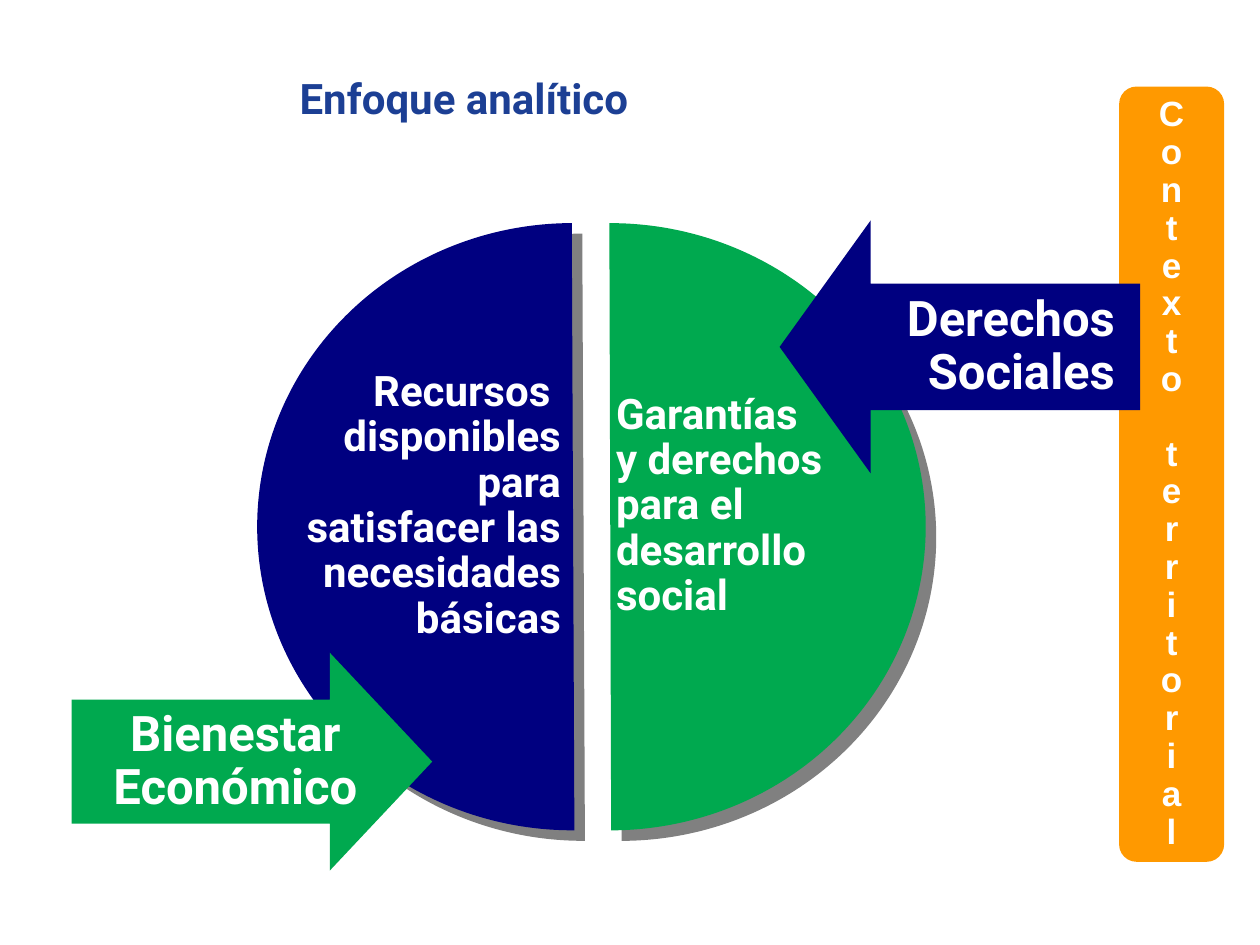
"""Build the slide on the analytic approach: two half discs, two arrows and a bar."""
from dataclasses import dataclass

from lxml.etree import SubElement
from pptx import Presentation
from pptx.dml.color import RGBColor
from pptx.enum.shapes import MSO_SHAPE
from pptx.enum.text import MSO_ANCHOR, MSO_AUTO_SIZE, PP_ALIGN
from pptx.oxml.ns import qn
from pptx.util import Pt

NAVY = RGBColor(0x00, 0x00, 0x80)
GREEN = RGBColor(0x00, 0xA9, 0x4F)
AMBER = RGBColor(0xFF, 0x99, 0x00)
BLUE = RGBColor(0x1C, 0x3F, 0x94)
WHITE = RGBColor(0xFF, 0xFF, 0xFF)
GRAY = RGBColor(0x80, 0x80, 0x80)


@dataclass
class Box:
    """A frame in points."""
    left: float
    top: float
    width: float
    height: float

    def place(self) -> tuple:
        """Give the frame as lengths."""
        return Pt(self.left), Pt(self.top), Pt(self.width), Pt(self.height)


@dataclass
class Form:
    """A filled preset shape."""
    kind: MSO_SHAPE
    box: Box
    fill: RGBColor
    adjust: tuple = ()


@dataclass
class Note:
    """A text block over a half disc."""
    box: Box
    lines: list
    align: PP_ALIGN


def write(shape, lines: list, *, size: float, color: RGBColor = WHITE, font: str = "Roboto",
          align: PP_ALIGN = PP_ALIGN.LEFT, anchor: MSO_ANCHOR = MSO_ANCHOR.TOP, space: float = 0.9,
          gap: float = 0, sides: tuple = (0, 0), wrap: bool = True, grow: bool = False) -> None:
    """Fill a shape with formatted paragraphs."""
    frame = shape.text_frame
    frame.word_wrap = wrap
    frame.auto_size = MSO_AUTO_SIZE.SHAPE_TO_FIT_TEXT if grow else MSO_AUTO_SIZE.NONE
    frame.vertical_anchor = anchor
    frame.margin_left, frame.margin_right = (Pt(side) for side in sides)
    frame.margin_top = frame.margin_bottom = Pt(3.6)
    for i, line in enumerate(lines):
        para = frame.add_paragraph() if i else frame.paragraphs[0]
        para.text = line
        para.alignment = align
        para.line_spacing = space
        para.space_before = Pt(gap if i else 0)
        for run in para.runs:
            run.font.name = font
            run.font.size = Pt(size)
            run.font.bold = True
            run.font.color.rgb = color


def draw(slide, form: Form):
    """Add a flat shape without outline."""
    shape = slide.shapes.add_shape(form.kind, *form.box.place())
    for i, value in enumerate(form.adjust):
        shape.adjustments[i] = value
    shape.fill.solid()
    shape.fill.fore_color.rgb = form.fill
    shape.line.fill.background()
    shape.shadow.inherit = False
    return shape


def shade(shape) -> None:
    """Cast a hard gray shadow to the lower right."""
    list_ = shape._element.spPr.find(qn("a:effectLst"))
    cast = SubElement(list_, qn("a:outerShdw"), dist=str(Pt(8.5)), dir="2700000",
                      algn="ctr", rotWithShape="0")
    SubElement(cast, qn("a:srgbClr"), val=str(GRAY))


def main() -> None:
    """Build and save the slide."""
    deck = Presentation()
    deck.slide_width, deck.slide_height = Pt(720), Pt(540)
    slide = deck.slides.add_slide(deck.slide_layouts[5])

    title = slide.shapes.title
    title.left, title.top, title.width, title.height = Box(164, 38, 446.5, 36).place()
    write(title, ["Enfoque analítico"], size=24, color=BLUE, space=1, sides=(7.2, 7.2), grow=True)

    halves = [
        Form(MSO_SHAPE.CHORD, Box(147, 127.5, 360.5, 347), NAVY, (53.8, 161.9)),
        Form(MSO_SHAPE.CHORD, Box(168.5, 127.5, 360.5, 347), GREEN, (161.9, 53.9)),
    ]
    for half in halves:
        shade(draw(slide, half))

    notes = [
        Note(Box(166.5, 208, 154, 188.5),
             ["Recursos ", "disponibles para satisfacer las necesidades básicas"], PP_ALIGN.RIGHT),
        Note(Box(352, 221, 161.5, 137),
             ["Garantías \ny derechos para el desarrollo social"], PP_ALIGN.LEFT),
    ]
    for note in notes:
        text = slide.shapes.add_textbox(*note.box.place())
        write(text, note.lines, size=24, align=note.align, grow=True)

    wealth = draw(slide, Form(MSO_SHAPE.RIGHT_ARROW, Box(41, 373, 206, 124.5), GREEN, (0.57, 0.47)))
    write(wealth, ["Bienestar\nEconómico"], size=28, align=PP_ALIGN.CENTER,
          anchor=MSO_ANCHOR.MIDDLE, sides=(14.4, 0), wrap=False)

    bar = draw(slide, Form(MSO_SHAPE.FLOWCHART_ALTERNATE_PROCESS, Box(639.5, 49.5, 60, 443), AMBER))
    write(bar, ["\n".join(word) for word in ("Contexto", "territorial")], size=20, font="Arial",
          align=PP_ALIGN.CENTER, anchor=MSO_ANCHOR.MIDDLE, gap=21, wrap=False)

    rights = draw(slide, Form(MSO_SHAPE.LEFT_ARROW, Box(445.5, 126, 206, 144.5), NAVY, (0.5, 0.36)))
    write(rights, ["Derechos\nSociales"], size=28, align=PP_ALIGN.RIGHT,
          anchor=MSO_ANCHOR.MIDDLE, sides=(0, 14.4), wrap=False)

    deck.save("out.pptx")


if __name__ == "__main__":
    main()
